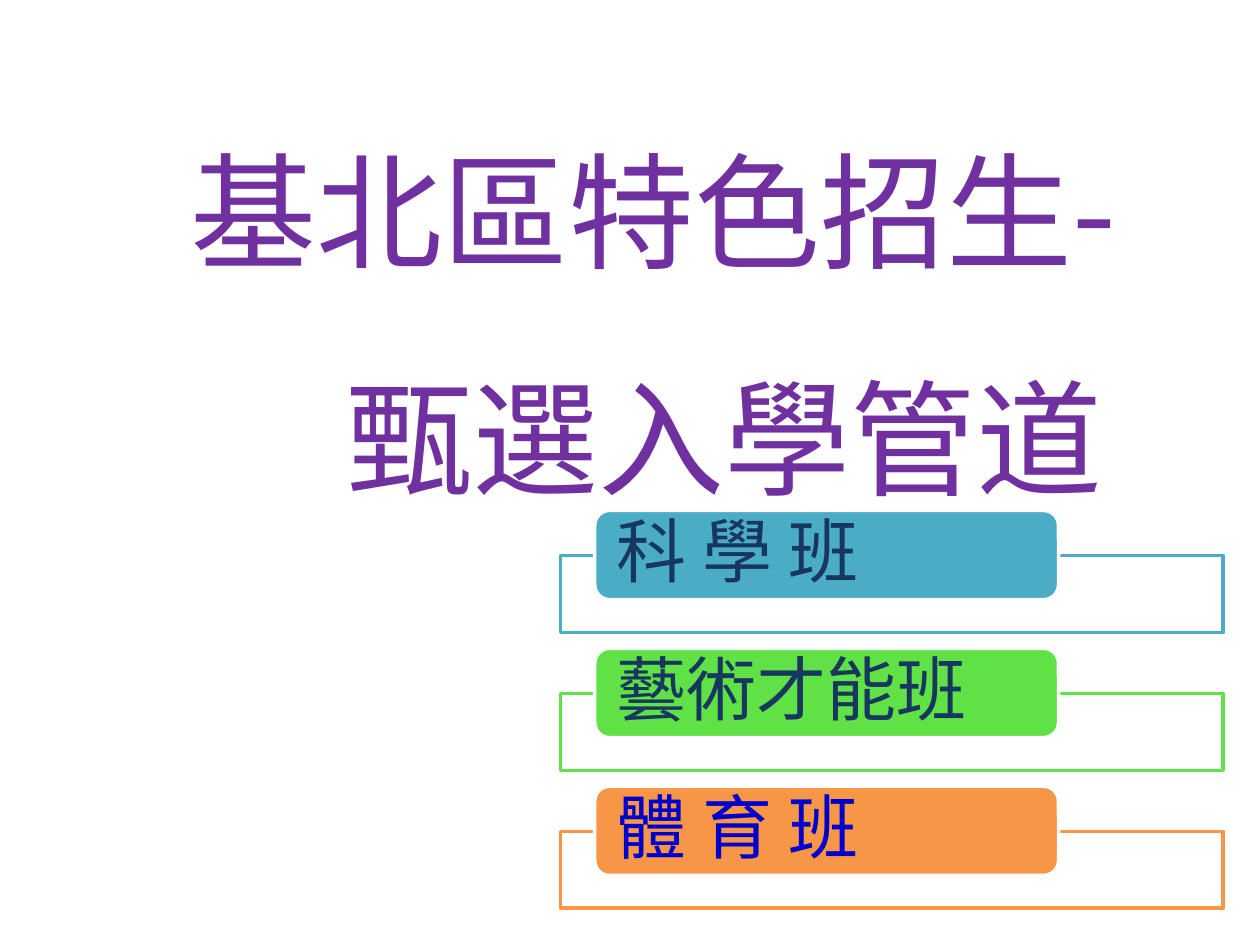
from dataclasses import dataclass

import pptx
import pptx.dml.color
import pptx.enum.shapes
import pptx.enum.text
import pptx.oxml.ns
import pptx.util
from lxml import etree

Cm = pptx.util.Cm
Pt = pptx.util.Pt
RGB = pptx.dml.color.RGBColor.from_string
SHAPES = pptx.enum.shapes.MSO_SHAPE
ALIGN = pptx.enum.text.PP_ALIGN
qn = pptx.oxml.ns.qn


@dataclass(frozen=True)
class Theme:
    font: str = "Noto Sans CJK SC"
    title_size: int = 72
    label_size: int = 40
    title: str = "7030A0"
    navy: str = "17375E"
    blue: str = "0000CC"
    white: str = "FFFFFF"
    teal: str = "4BACC6"
    green: str = "60E146"
    orange: str = "F79646"


theme = Theme()


def write(paragraph, text, *, size, color, align, spacing, indent=0):
    paragraph.alignment = align
    paragraph.line_spacing = spacing
    if indent:
        paragraph._p.get_or_add_pPr().set("marL", str(Cm(indent)))
    run = paragraph.add_run()
    run.text = text
    run.font.size = Pt(size)
    run.font.color.rgb = RGB(color)
    run.font.name = theme.font
    etree.SubElement(run._r.rPr, qn("a:ea"), typeface=theme.font)


def add_panel(preset, left, top, width, height, fill, line):
    panel = slide.shapes.add_shape(preset, Cm(left), Cm(top), Cm(width), Cm(height))
    panel.shadow.inherit = False
    panel.fill.solid()
    panel.fill.fore_color.rgb = RGB(fill)
    panel.line.color.rgb = RGB(line)
    panel.line.width = Pt(2)
    return panel


deck = pptx.Presentation()
deck.slide_width, deck.slide_height = Cm(25.4), Cm(19.05)
slide = deck.slides.add_slide(deck.slide_layouts[6])

# Title: two centred lines, the second pushed further right
heading = slide.shapes.add_textbox(Cm(0.79), Cm(0.58), Cm(23.62), Cm(10.31)).text_frame
heading.word_wrap = True
heading.vertical_anchor = pptx.enum.text.MSO_ANCHOR.MIDDLE
first_line, second_line = heading.paragraphs[0], heading.add_paragraph()
for paragraph, text, indent in [
    (first_line, "基北區特色招生-", 1.14),
    (second_line, "甄選入學管道", 4),
]:
    write(paragraph, text, size=theme.title_size, color=theme.title,
          align=ALIGN.CENTER, spacing=1.5, indent=indent)

# Class types: a label overlapping the top edge of each outlined frame
class_types = [
    ("科 學 班", theme.teal, theme.navy),
    ("藝術才能班", theme.green, theme.navy),
    ("體 育 班", theme.orange, theme.blue),
]
first_top, pitch, frame_drop = 10.29, 2.78, 0.91

for row, (class_name, accent, text_color) in enumerate(class_types):
    top = first_top + row * pitch
    frame = add_panel(SHAPES.RECTANGLE, 11.3, top + frame_drop, 13.36, 1.55,
                      theme.white, accent)
    frame_color = frame.fill._xPr.find(qn("a:solidFill"))[0]
    etree.SubElement(frame_color, qn("a:alpha"), val="90000")

    label = add_panel(SHAPES.ROUNDED_RECTANGLE, 11.99, top, 9.35, 1.8,
                      accent, theme.white)
    label_text = label.text_frame
    label_text.word_wrap = True
    label_text.vertical_anchor = pptx.enum.text.MSO_ANCHOR.MIDDLE
    label_text.margin_left = label_text.margin_right = Cm(0.36)
    label_text.margin_top = label_text.margin_bottom = 0
    write(label_text.paragraphs[0], class_name, size=theme.label_size,
          color=text_color, align=ALIGN.LEFT, spacing=0.9)

deck.save("out.pptx")
